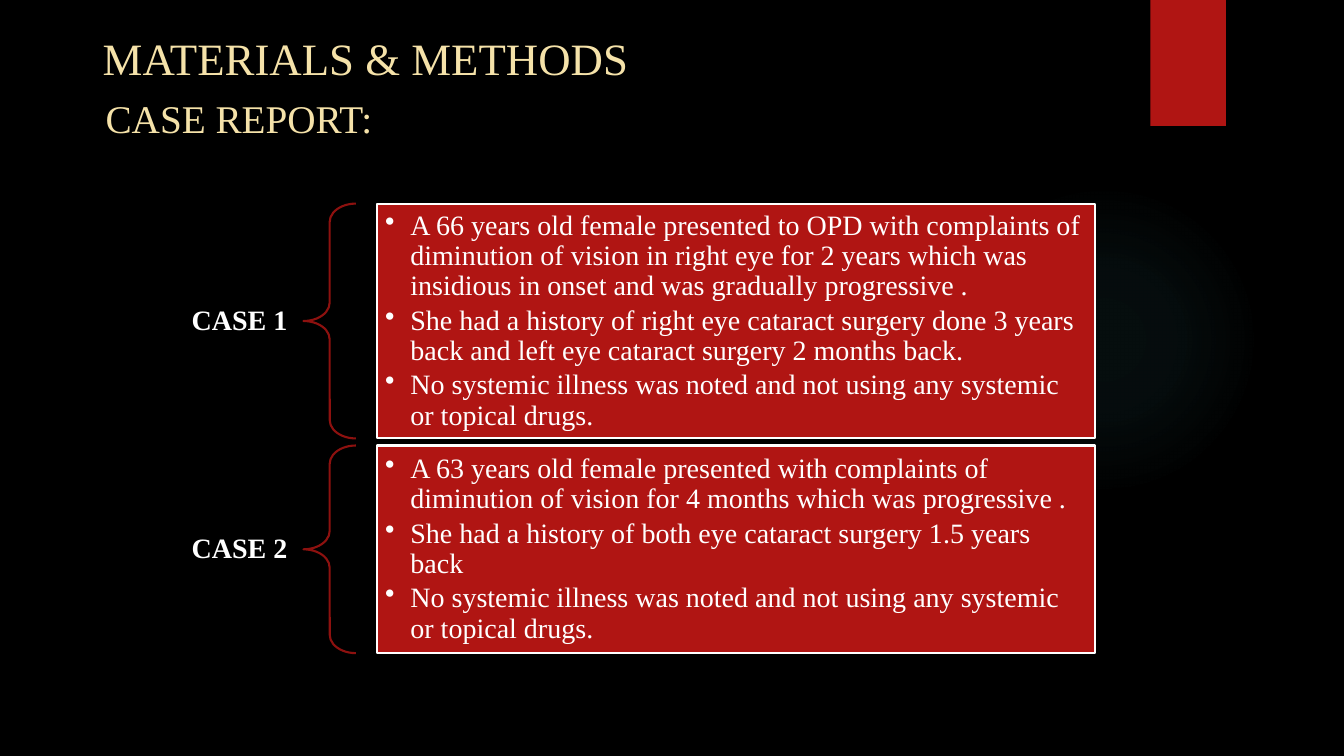
import pptx
import pptx.util
import pptx.oxml
import pptx.oxml.ns
import pptx.dml.color
import pptx.enum.shapes
import pptx.enum.text
import lxml.etree

Inches, Pt = pptx.util.Inches, pptx.util.Pt
SHAPE = pptx.enum.shapes.MSO_SHAPE
ALIGN = pptx.enum.text.PP_ALIGN
ANCHOR = pptx.enum.text.MSO_ANCHOR
qn = pptx.oxml.ns.qn

COLORS = {"back": "000000", "red": "B01513", "brace": "8D110F",
          "title": "F5E2A9", "text": "FFFFFF", "glow": "50B9C1"}
FONT = "Times New Roman"

# Each case: label, top, height, findings
CASES = [
    ("CASE 1", 2.02, 2.33, [
        "A 66 years old female presented to OPD with complaints of diminution of "
        "vision in right eye for 2 years which was insidious in onset and was "
        "gradually progressive .",
        "She had a history of right eye cataract surgery done 3 years back and "
        "left eye cataract surgery 2 months back.",
        "No systemic illness was noted and not using any systemic or topical drugs."]),
    ("CASE 2", 4.42, 2.06, [
        "A 63 years old female presented with complaints of diminution of vision "
        "for 4 months which was progressive .",
        "She had a history of both eye cataract surgery 1.5 years back",
        "No systemic illness was noted and not using any systemic or topical drugs."]),
]


def rgb(name):
    return pptx.dml.color.RGBColor.from_string(COLORS[name])


def add_shape(slide, kind, box, fill=None, line=None):
    shape = slide.shapes.add_shape(kind, *map(Inches, box))
    shape.shadow.inherit = False
    if fill:
        shape.fill.solid()
        shape.fill.fore_color.rgb = rgb(fill)
    else:
        shape.fill.background()
    if line:
        shape.line.color.rgb = rgb(line)
        shape.line.width = Pt(1.5)
    else:
        shape.line.fill.background()
    return shape


def add_bullet(para):
    props = para._p.get_or_add_pPr()
    props.set("marL", str(Inches(0.25)))
    props.set("indent", str(-Inches(0.25)))
    lxml.etree.SubElement(props, qn("a:buChar")).set("char", "•")


def write(shape, lines, size=20, color="text", bold=False, align=ALIGN.LEFT,
          anchor=ANCHOR.MIDDLE, pads=(0.1, 0.05), space=0.9, after=0, bullet=False):
    frame = shape.text_frame
    frame.word_wrap = True
    frame.vertical_anchor = anchor
    frame.margin_left = frame.margin_right = Inches(pads[0])
    frame.margin_top = frame.margin_bottom = Inches(pads[1])
    for i, line in enumerate(lines):
        para = frame.add_paragraph() if i else frame.paragraphs[0]
        if bullet:
            add_bullet(para)
        para.alignment = align
        para.line_spacing = space
        para.space_after = Pt(after)
        run = para.add_run()
        run.text = line
        run.font.name = FONT
        run.font.size = Pt(size)
        run.font.bold = bold
        run.font.color.rgb = rgb(color)


def add_text(slide, box, lines, **form):
    write(slide.shapes.add_textbox(*map(Inches, box)), lines, **form)


def add_glow(slide, box):
    glow = add_shape(slide, SHAPE.OVAL, box)
    stops = "".join(
        f'<a:gs pos="{pos * 1000}"><a:srgbClr val="{COLORS["glow"]}">'
        f'<a:alpha val="{alpha * 1000}"/></a:srgbClr></a:gs>'
        for pos, alpha in ((0, 7), (36, 6), (69, 0), (100, 0)))
    grad = pptx.oxml.parse_xml(
        f'<a:gradFill {pptx.oxml.ns.nsdecls("a")}><a:gsLst>{stops}</a:gsLst>'
        '<a:path path="circle"><a:fillToRect l="50000" t="50000" r="50000" b="50000"/>'
        '</a:path></a:gradFill>')
    props = glow._element.spPr
    props.replace(props.find(qn("a:noFill")), grad)


def add_decor(slide):
    add_glow(slide, (9.41, 1.83, 3.08, 3.08))
    add_shape(slide, SHAPE.RECTANGLE, (11.41, 0, 0.75, 1.25), fill="red")


def add_heads(slide, left, top):
    add_text(slide, (left + 0.03, top + 0.84, 11.5, 0.62), ["CASE REPORT:"],
             size=28, color="title", anchor=ANCHOR.TOP, space=1.0)
    add_text(slide, (left, top, 6.39, 1.11), ["MATERIALS & METHODS"],
             size=32, color="title")


def add_case(slide, box, label, facts):
    left, top, width, height = box
    tag, tall, arm, gap = 2.62, 0.43, 0.52, 0.21
    # Label, centred on the brace
    add_text(slide, (left, top + (height - tall) / 2, tag, tall), [label],
             bold=True, align=ALIGN.RIGHT, pads=(0.16, 0.06))
    # Brace
    brace = add_shape(slide, SHAPE.LEFT_BRACE, (left + tag, top, arm, height),
                      line="brace")
    brace.adjustments[0] = 0.35
    brace.adjustments[1] = 0.5
    # Findings
    start = tag + arm + gap
    panel = add_shape(slide, SHAPE.RECTANGLE,
                      (left + start, top, width - start, height),
                      fill="red", line="text")
    write(panel, facts, pads=(0.08, 0.08), after=3, bullet=True)


def main():
    deck = pptx.Presentation()
    deck.slide_width, deck.slide_height = Inches(13.33), Inches(7.5)
    slide = deck.slides.add_slide(deck.slide_layouts[6])
    slide.background.fill.solid()
    slide.background.fill.fore_color.rgb = rgb("back")
    add_decor(slide)
    add_heads(slide, 0.92, 0.05)
    for label, top, height, facts in CASES:
        add_case(slide, (0.39, top, 10.47, height), label, facts)
    deck.save("out.pptx")


if __name__ == "__main__":
    main()
